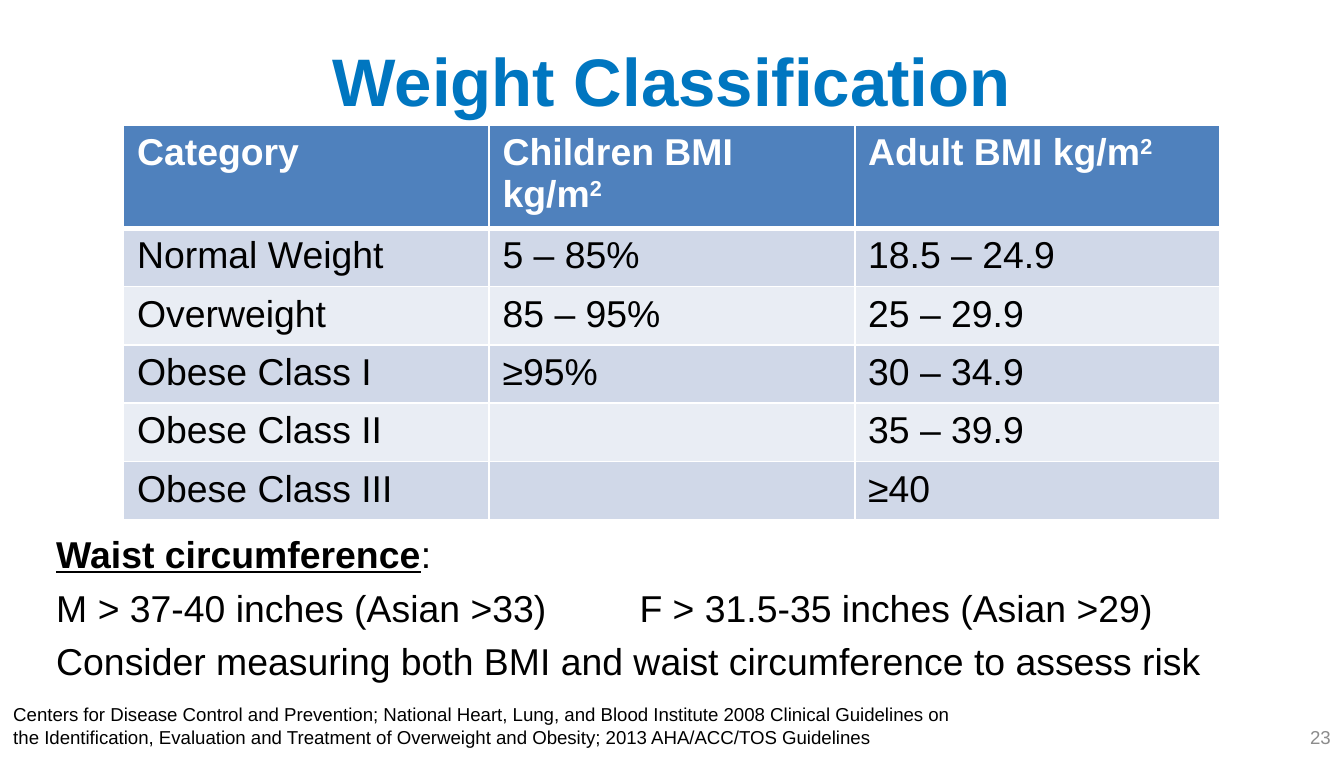
from lxml import etree
from pptx import Presentation
from pptx.dml.color import RGBColor
from pptx.enum.text import MSO_ANCHOR, PP_ALIGN
from pptx.oxml.ns import qn
from pptx.util import Inches, Pt

LEFT, CENTER, RIGHT = PP_ALIGN.LEFT, PP_ALIGN.CENTER, PP_ALIGN.RIGHT
TOP, MIDDLE = MSO_ANCHOR.TOP, MSO_ANCHOR.MIDDLE

TITLE_BLUE, HEADER_BLUE = "0076C0", "4F81BD"
BANDS = ("D0D8E8", "E9EDF4")
BLACK, WHITE, GRAY = "000000", "FFFFFF", "8C8C8C"


def color(value):
    return RGBColor.from_string(value)


class SlideBuilder:
    font = "Arial"

    def __init__(self, slide):
        self.slide = slide

    def run(self, p, text, size, fill=BLACK, bold=False, underline=False, superscript=False):
        r = p.add_run()
        r.text = text
        r.font.name = self.font
        r.font.size = Pt(size)
        r.font.bold = bold
        r.font.underline = underline
        r.font.color.rgb = color(fill)
        if superscript:
            r.font._element.set("baseline", "30000")

    def text(self, box, paragraphs, size, fill=BLACK, align=LEFT, anchor=TOP, gap=0, tab=None):
        """Each paragraph is a list of (text, run options)."""
        sp = self.slide.shapes.add_textbox(*map(Inches, box))
        tf = sp.text_frame
        tf.word_wrap = True
        tf.vertical_anchor = anchor
        for i, runs in enumerate(paragraphs):
            p = tf.add_paragraph() if i else tf.paragraphs[0]
            p.alignment = align
            if i and gap:
                p.space_before = Pt(gap)
            if tab and any("\t" in text for text, _ in runs):
                tabs = etree.SubElement(p._p.get_or_add_pPr(), qn("a:tabLst"))
                etree.SubElement(tabs, qn("a:tab"), pos=str(Inches(tab)), algn="l")
            for text, options in runs:
                self.run(p, text, size, fill, **options)

    def borders(self, cell, top, bottom):
        tc_pr = cell._tc.get_or_add_tcPr()
        widths = (("L", 1), ("R", 1), ("T", top), ("B", bottom))
        for i, (side, width) in enumerate(widths):
            ln = etree.Element(qn(f"a:ln{side}"), w=str(Pt(width)))
            solid = etree.SubElement(ln, qn("a:solidFill"))
            etree.SubElement(solid, qn("a:srgbClr"), val=WHITE)
            tc_pr.insert(i, ln)

    def table(self, box, rows, size, header_height):
        shape = self.slide.shapes.add_table(len(rows), len(rows[0]), *map(Inches, box))
        table = shape.table
        body_height = (box[3] - header_height) / (len(rows) - 1)
        for column in table.columns:
            column.width = Inches(box[2] / len(rows[0]))
        for i, values in enumerate(rows):
            header = i == 0
            table.rows[i].height = Inches(header_height if header else body_height)
            for j, value in enumerate(values):
                cell = table.cell(i, j)
                cell.fill.solid()
                cell.fill.fore_color.rgb = color(HEADER_BLUE if header else BANDS[(i - 1) % 2])
                self.borders(cell, top=3 if i == 1 else 1, bottom=3 if header else 1)
                base, _, power = value.partition("^")
                p = cell.text_frame.paragraphs[0]
                fill = WHITE if header else BLACK
                if base:
                    self.run(p, base, size, fill, bold=header)
                if power:
                    self.run(p, power, size, fill, bold=header, superscript=True)


def main():
    prs = Presentation()
    prs.slide_width, prs.slide_height = Inches(10), Inches(5.63)
    s = SlideBuilder(prs.slides.add_slide(prs.slide_layouts[6]))

    # Title
    s.text((0.5, 0.24, 9, 0.7), [[("Weight Classification", {"bold": True})]],
           36, TITLE_BLUE, CENTER, MIDDLE)

    # BMI table; ^ marks a superscript
    s.table((0.92, 0.93, 8.16, 2.93), [
        ("Category", "Children BMI kg/m^2", "Adult BMI kg/m^2"),
        ("Normal Weight", "5 – 85%", "18.5 – 24.9"),
        ("Overweight", "85 – 95%", "25 – 29.9"),
        ("Obese Class I", "≥95%", "30 – 34.9"),
        ("Obese Class II", "", "35 – 39.9"),
        ("Obese Class III", "", "≥40"),
    ], 20, header_height=0.76)

    # Waist circumference
    s.text((0.32, 3.9, 8.75, 1.3), [
        [("Waist circumference", {"bold": True, "underline": True}), (":", {})],
        [("M > 37-40 inches (Asian >33)\tF > 31.5-35 inches (Asian >29)", {})],
        [("Consider measuring both BMI and waist circumference to assess risk", {})],
    ], 20, gap=4.8, tab=4.34)

    # Sources and slide number
    s.text((0, 5.18, 7.25, 0.44), [[(
        "Centers for Disease Control and Prevention; National Heart, Lung, and Blood Institute "
        "2008 Clinical Guidelines on the Identification, Evaluation and Treatment of Overweight "
        "and Obesity; 2013 AHA/ACC/TOS Guidelines", {})]], 10)
    s.text((7.67, 5.33, 2.33, 0.3), [[("23", {})]], 10, GRAY, RIGHT, MIDDLE)

    prs.save("out.pptx")


if __name__ == "__main__":
    main()
